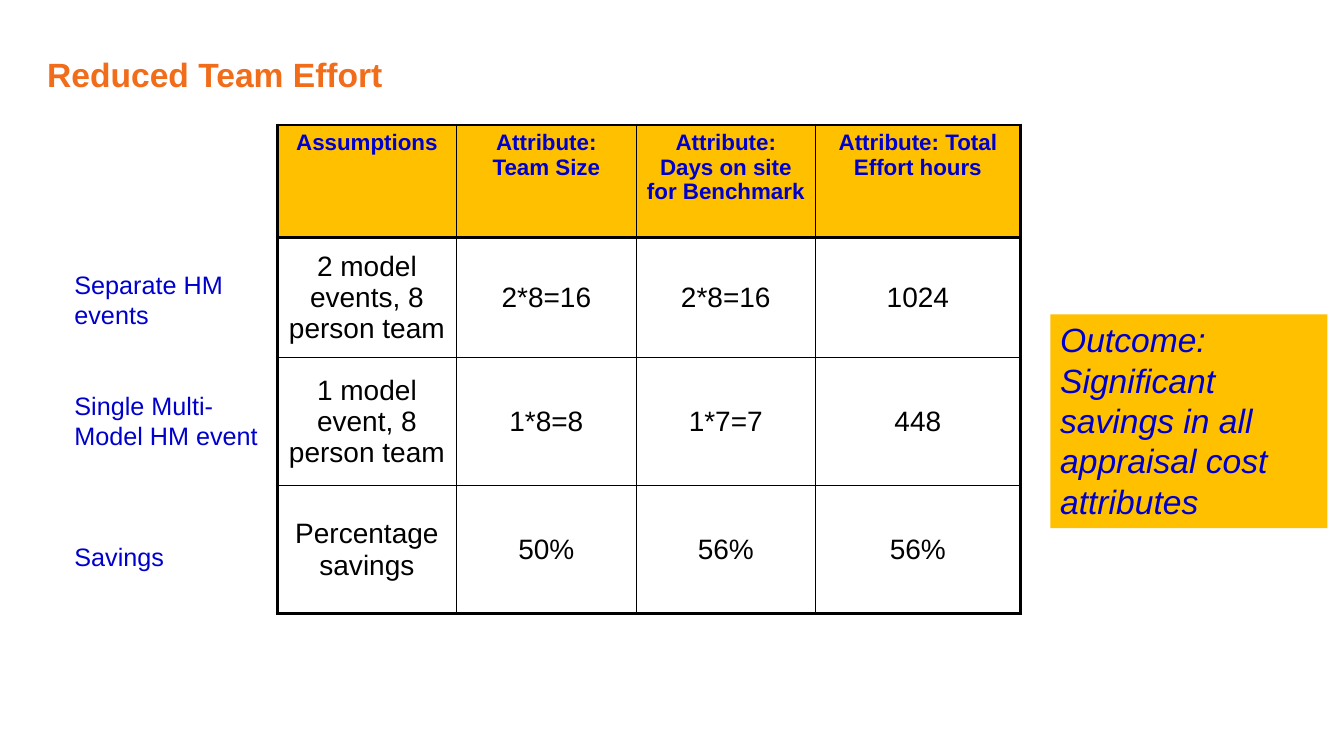
from dataclasses import dataclass

from lxml.etree import SubElement
from pptx import Presentation
from pptx.dml.color import RGBColor
from pptx.enum.shapes import MSO_SHAPE
from pptx.enum.text import MSO_ANCHOR, PP_ALIGN
from pptx.oxml.ns import qn
from pptx.util import Pt


@dataclass(frozen=True)
class Theme:
    """Colours, type sizes and line widths of the slide."""
    font: str = "Arial"
    orange: str = "F16D1A"
    blue: str = "0000CC"
    gold: str = "FFC000"
    black: str = "000000"
    large: int = 24
    body: int = 20
    label: int = 18
    head: int = 16
    leading: float = 1.2
    thick: float = 2.25
    thin: float = 1


THEME = Theme()
COLS = [128.2, 128.2, 128.2, 146.2]
ROWS = [80.6, 85.7, 91.4, 91.4]
CELLS = [
    ["Assumptions", "Attribute: Team Size",
     "Attribute: Days on site for Benchmark", "Attribute: Total Effort hours"],
    ["2 model events, 8 person team", "2*8=16", "2*8=16", "1024"],
    ["1 model event, 8 person team", "1*8=8", "1*7=7", "448"],
    ["Percentage savings", "50%", "56%", "56%"],
]
LABELS = [("Separate HM events", 0), ("Single Multi-Model HM event", 43.2),
          ("Savings", 64.8)]


def add_run(para, text, size, color, bold=False, italic=False):
    """Add one styled run to a paragraph."""
    run = para.add_run()
    run.text = text
    font = run.font
    font.name, font.size = THEME.font, Pt(size)
    font.bold, font.italic = bold, italic
    font.color.rgb = RGBColor.from_string(color)


def fill_frame(frame, items, size, color, **style):
    """Write (text, space before) items as left-aligned paragraphs."""
    frame.word_wrap = True
    frame.vertical_anchor = MSO_ANCHOR.TOP
    for index, (text, gap) in enumerate(items):
        para = frame.add_paragraph() if index else frame.paragraphs[0]
        para.alignment = PP_ALIGN.LEFT
        para.line_spacing = Pt(size * THEME.leading)
        para.space_before = Pt(gap)
        add_run(para, text, size, color, **style)


def add_text(slide, place, items, size, color, **style):
    """Add a text box at a place given in points."""
    box = slide.shapes.add_textbox(*map(Pt, place))
    fill_frame(box.text_frame, items, size, color, **style)


def add_panel(slide, place, text):
    """Add the gold panel with the outcome."""
    panel = slide.shapes.add_shape(MSO_SHAPE.RECTANGLE, *map(Pt, place))
    panel.shadow.inherit = False
    panel.fill.solid()
    panel.fill.fore_color.rgb = RGBColor.from_string(THEME.gold)
    panel.line.fill.background()
    fill_frame(panel.text_frame, [(text, 0)], THEME.large, THEME.blue, italic=True)


def set_edge(cell, side, width):
    """Draw one border of a cell."""
    props = cell._tc.get_or_add_tcPr()
    edge = SubElement(props, qn(f"a:ln{side}"), w=str(Pt(width)))
    SubElement(SubElement(edge, qn("a:solidFill")), qn("a:srgbClr"), val=THEME.black)


def style_cell(cell, row, col):
    """Set the borders, fill and text of the cell at a row and column."""
    last_row, last_col = len(ROWS) - 1, len(COLS) - 1
    heavy = {"L": col == 0, "R": col == last_col,
             "T": row in (0, 1), "B": row in (0, last_row)}
    for side, strong in heavy.items():
        set_edge(cell, side, THEME.thick if strong else THEME.thin)
    para = cell.text_frame.paragraphs[0]
    para.alignment = PP_ALIGN.CENTER
    if row == 0:
        cell.fill.solid()
        cell.fill.fore_color.rgb = RGBColor.from_string(THEME.gold)
        cell.vertical_anchor = MSO_ANCHOR.TOP
        add_run(para, CELLS[row][col], THEME.head, THEME.blue, bold=True)
    else:
        cell.fill.background()
        cell.vertical_anchor = MSO_ANCHOR.MIDDLE
        add_run(para, CELLS[row][col], THEME.body, THEME.black)


def add_grid(slide, left, top):
    """Add the table of effort figures."""
    place = map(Pt, (left, top, sum(COLS), sum(ROWS)))
    table = slide.shapes.add_table(len(ROWS), len(COLS), *place).table
    table.horz_banding = False
    for column, width in zip(table.columns, COLS):
        column.width = Pt(width)
    for row, height in enumerate(ROWS):
        table.rows[row].height = Pt(height)
        for col in range(len(COLS)):
            style_cell(table.cell(row, col), row, col)


def main():
    """Build and save the slide."""
    deck = Presentation()
    deck.slide_width, deck.slide_height = Pt(960), Pt(540)
    slide = deck.slides.add_slide(deck.slide_layouts[6])
    add_text(slide, (26.6, 35.3, 769, 33.8), [("Reduced Team Effort", 0)],
             THEME.large, THEME.orange, bold=True)
    add_grid(slide, 198, 89.3)
    add_text(slide, (46.1, 188.6, 146.2, 225.4), LABELS, THEME.label, THEME.blue)
    add_panel(slide, (750.2, 224.6, 198, 152.6),
              "Outcome: Significant savings in all appraisal cost attributes")
    deck.save("out.pptx")


if __name__ == "__main__":
    main()
